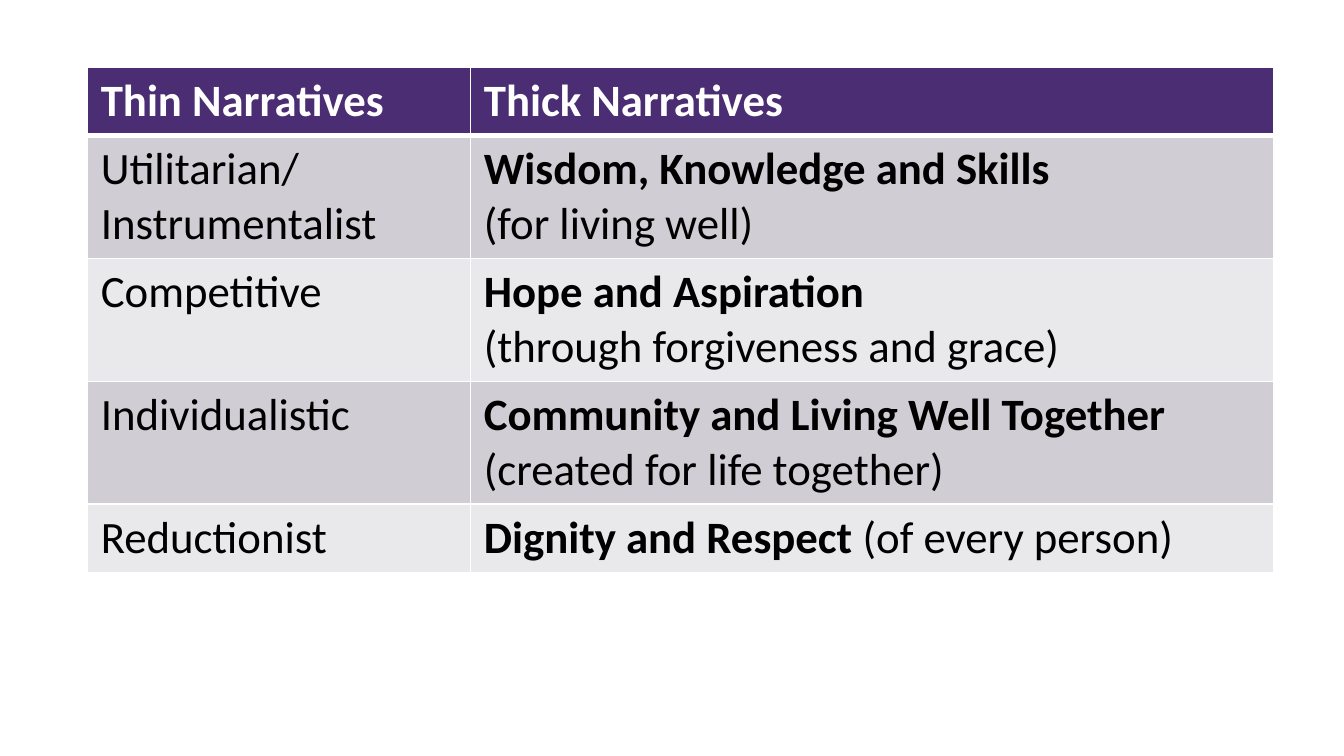
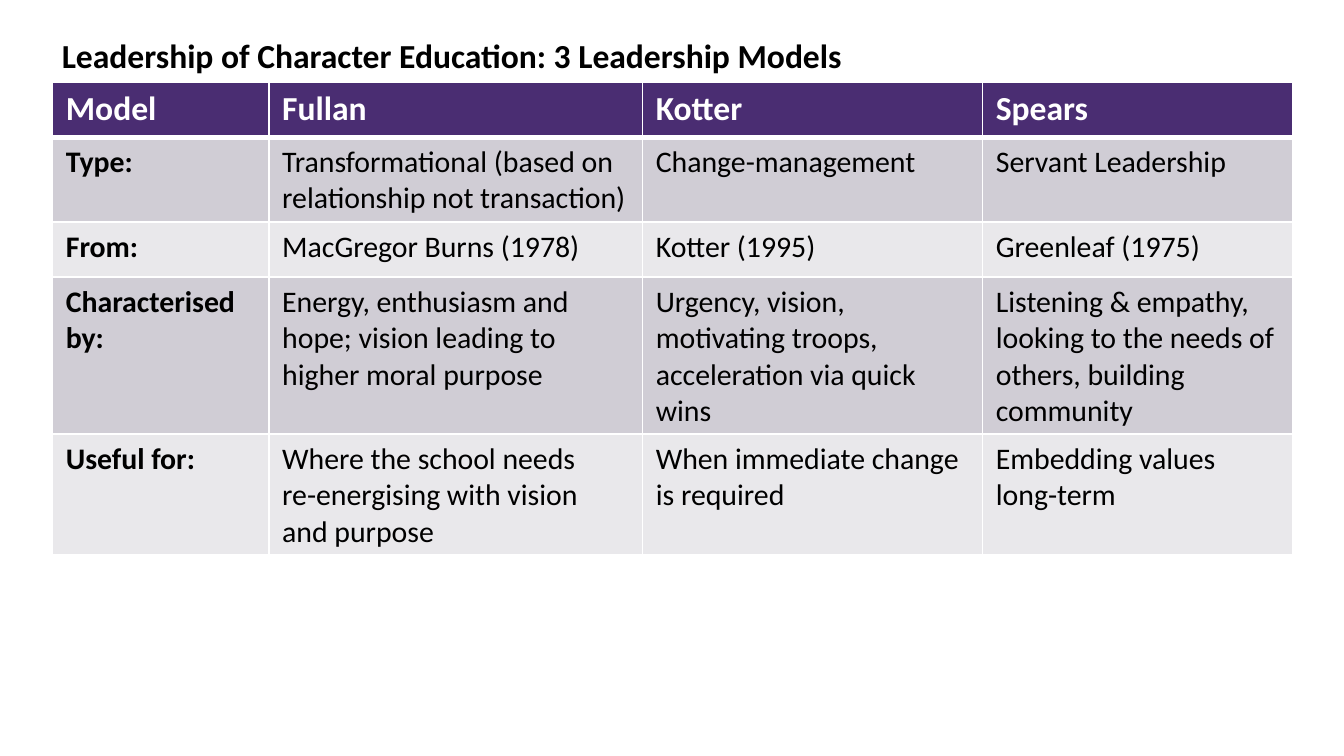
from dataclasses import dataclass

from lxml import etree
from pptx import Presentation
from pptx import util as u
from pptx.dml.color import RGBColor
from pptx.enum import text
from pptx.oxml import ns

PX = 4572


@dataclass(frozen=True)
class Theme:
    font: str = "Calibri"
    header: str = "4A2D72"
    bands: tuple[str, str] = ("D0CDD5", "E9E8EB")
    light: str = "FFFFFF"
    dark: str = "000000"
    large: int = 24
    medium: int = 18
    small: int = 16
    rule: int = 1
    header_rule: int = 3


THEME = Theme()


@dataclass(frozen=True)
class Span:
    text: str
    bold: bool = False


Cell = tuple[tuple[Span, ...], ...]


@dataclass(frozen=True)
class Grid:
    left: int
    top: int
    height: int
    columns: tuple[int, ...]
    rows: tuple[int, ...]
    header_size: int
    body_size: int
    cells: tuple[tuple[Cell, ...], ...]


def px(length: int) -> u.Emu:
    return u.Emu(length * PX)


def lines(*texts: str, bold: bool = False) -> Cell:
    return tuple((Span(line, bold),) for line in texts)


def header(*labels: str) -> tuple[Cell, ...]:
    return tuple(lines(label, bold=True) for label in labels)


def labelled(label: str, *texts: str) -> tuple[Cell, ...]:
    return (lines(label, bold=True), *(lines(entry) for entry in texts))


def stacked(strong: str, plain: str) -> Cell:
    return ((Span(strong, True),), (Span(plain),))


def joined(strong: str, plain: str) -> Cell:
    return ((Span(strong, True), Span(plain)),)


def add_span(para, span: Span, size: int, color: str) -> None:
    for index, piece in enumerate(span.text.split("\v")):
        if index:
            para.add_line_break()
        run = para.add_run()
        run.text = piece
        run.font.name = THEME.font
        run.font.size = u.Pt(size)
        run.font.bold = span.bold
        run.font.color.rgb = RGBColor.from_string(color)


def write(frame, content: Cell, size: int, color: str) -> None:
    for index, spans in enumerate(content):
        para = frame.add_paragraph() if index else frame.paragraphs[0]
        para.alignment = text.PP_ALIGN.LEFT
        for span in spans:
            add_span(para, span, size, color)


def add_border(cell, side: str, points: int) -> None:
    properties = cell._tc.get_or_add_tcPr()
    line = etree.SubElement(properties, ns.qn(f"a:ln{side}"), w=str(u.Pt(points)))
    fill = etree.SubElement(line, ns.qn("a:solidFill"))
    etree.SubElement(fill, ns.qn("a:srgbClr"), val=THEME.light)


def style_cell(cell, content: Cell, row: int, grid: Grid) -> None:
    is_header = row == 0
    borders = {"L": THEME.rule, "R": THEME.rule}
    if is_header:
        borders["T"] = THEME.rule
    borders["B"] = THEME.header_rule if is_header else THEME.rule
    for side, points in borders.items():
        add_border(cell, side, points)
    cell.fill.solid()
    band = THEME.header if is_header else THEME.bands[(row - 1) % 2]
    cell.fill.fore_color.rgb = RGBColor.from_string(band)
    size = grid.header_size if is_header else grid.body_size
    write(cell.text_frame, content, size, THEME.light if is_header else THEME.dark)


def add_grid(page, grid: Grid) -> None:
    frame = page.shapes.add_table(
        len(grid.rows), len(grid.columns), px(grid.left), px(grid.top),
        px(sum(grid.columns)), px(grid.height),
    )
    table = frame.table
    for column, width in zip(table.columns, grid.columns):
        column.width = px(width)
    for row, height in zip(table.rows, grid.rows):
        row.height = px(height)
    frame.height = px(grid.height)
    for row, contents in enumerate(grid.cells):
        for column, content in enumerate(contents):
            style_cell(table.cell(row, column), content, row, grid)


def add_title(page, title: str, left: int, top: int, width: int, height: int) -> None:
    box = page.shapes.title
    box.left, box.top, box.width, box.height = map(px, (left, top, width, height))
    frame = box.text_frame
    frame.word_wrap = True
    frame.auto_size = text.MSO_AUTO_SIZE.SHAPE_TO_FIT_TEXT
    frame.vertical_anchor = text.MSO_ANCHOR.TOP
    write(frame, lines(title, bold=True), THEME.medium, THEME.dark)


NARRATIVES = Grid(
    left=130, top=100, height=744,
    columns=(570, 1196), rows=(102, 180, 180, 180, 102),
    header_size=THEME.large, body_size=THEME.large,
    cells=(
        header("Thin Narratives", "Thick Narratives"),
        (lines("Utilitarian/", "Instrumentalist"),
         stacked("Wisdom, Knowledge and Skills", "(for living well)")),
        (lines("Competitive"),
         stacked("Hope and Aspiration", "(through forgiveness and grace)")),
        (lines("Individualistic"),
         joined("Community and Living Well Together ", "(created for life together)")),
        (lines("Reductionist"),
         joined("Dignity and Respect", " (of every person)")),
    ),
)

MODELS = Grid(
    left=78, top=122, height=702,
    columns=(322, 556, 506, 462), rows=(82,) * 5,
    header_size=THEME.medium, body_size=THEME.small,
    cells=(
        header("Model", "Fullan", "Kotter", "Spears"),
        labelled("Type:",
                 "Transformational (based on relationship not transaction)",
                 "Change-management",
                 "Servant Leadership"),
        labelled("From:",
                 "MacGregor Burns (1978)",
                 "Kotter (1995)",
                 "Greenleaf (1975)"),
        labelled("Characterised by:",
                 "Energy, enthusiasm and hope; vision leading to higher moral purpose",
                 "Urgency, vision, motivating troops, acceleration via quick wins",
                 "Listening & empathy, looking to the needs of others, building community"),
        labelled("Useful for:",
                 "Where the school needs\vre-energising with vision and purpose",
                 "When immediate change is required",
                 "Embedding values long-term"),
    ),
)


def main() -> None:
    deck = Presentation()
    deck.slide_width, deck.slide_height = px(2000), px(1125)
    title_only, blank = deck.slide_layouts[5], deck.slide_layouts[6]

    add_grid(deck.slides.add_slide(blank), NARRATIVES)

    models_page = deck.slides.add_slide(title_only)
    add_title(models_page, "Leadership of Character Education: 3 Leadership Models",
              72, 42, 1704, 80)
    add_grid(models_page, MODELS)

    deck.save("out.pptx")


if __name__ == "__main__":
    main()
